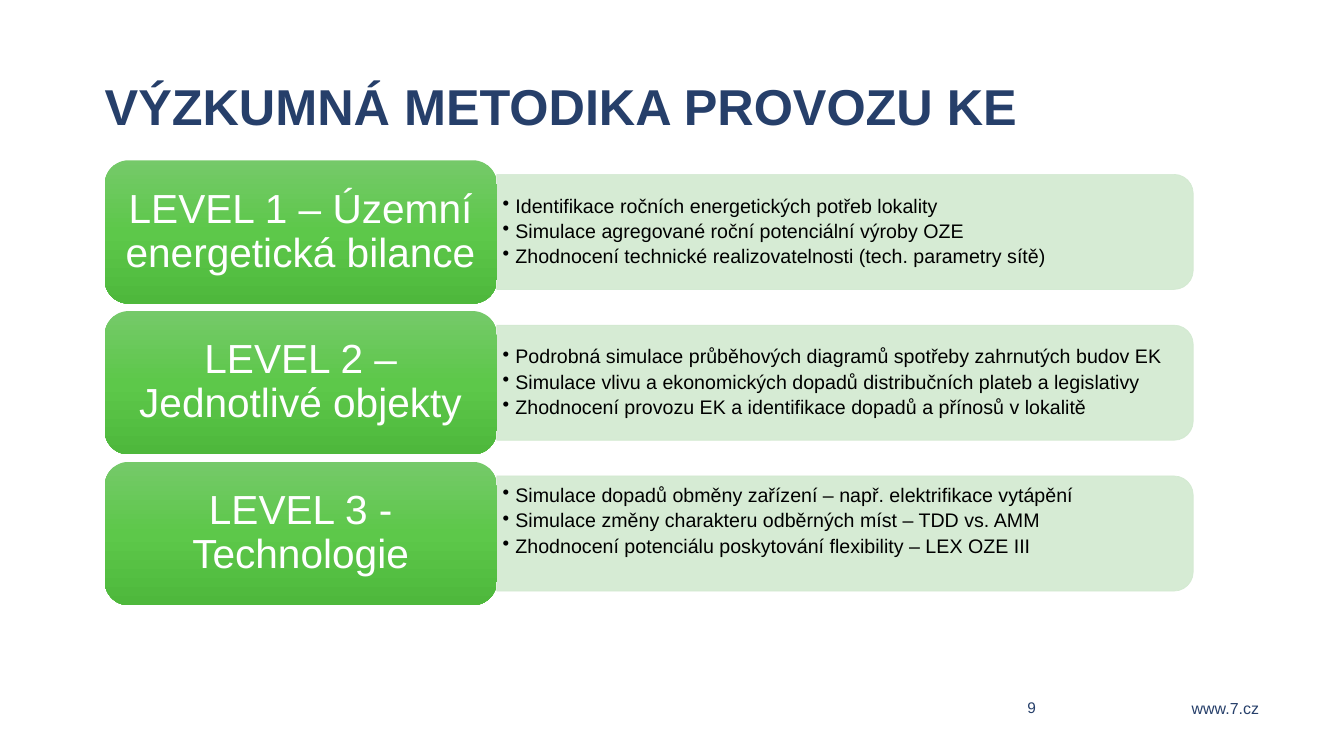
from copy import deepcopy

from lxml.etree import SubElement
from pptx import Presentation
from pptx.dml.color import RGBColor
from pptx.enum.shapes import MSO_SHAPE
from pptx.enum.text import MSO_ANCHOR, PP_ALIGN
from pptx.oxml.ns import qn
from pptx.util import Cm, Pt

TITLE = "VÝZKUMNÁ METODIKA PROVOZU KE"
PAGE_NUMBER = "9"
WEBSITE = "www.7.cz"
LEVELS = [
    {"name": "LEVEL 1 – Územní energetická bilance", "lift": 0,
     "steps": ["Identifikace ročních energetických potřeb lokality",
               "Simulace agregované roční potenciální výroby OZE",
               "Zhodnocení technické realizovatelnosti (tech. parametry sítě)"]},
    {"name": "LEVEL 2 – Jednotlivé objekty", "lift": 0,
     "steps": ["Podrobná simulace průběhových diagramů spotřeby zahrnutých budov EK",
               "Simulace vlivu a ekonomických dopadů distribučních plateb a legislativy",
               "Zhodnocení provozu EK a identifikace dopadů a přínosů v lokalitě"]},
    {"name": "LEVEL 3 - Technologie", "lift": 0.6,
     "steps": ["Simulace dopadů obměny zařízení – např. elektrifikace vytápění",
               "Simulace změny charakteru odběrných míst – TDD vs. AMM",
               "Zhodnocení potenciálu poskytování flexibility – LEX OZE III"]},
]
COLORS = {"navy": "263F6A", "panel": "D2E9D0", "text": "000000", "white": "FFFFFF",
          "green_top": "75C969", "green_mid": "5DC84A", "green_end": "4EB83C"}
FONT = "Arial"
LEFT, TOP, PITCH = 2.64, 4.04, 3.8
NAME_W, NAME_H = 9.88, 3.61
PANEL_W, PANEL_H = 17.55, 2.9
STEPS_W, STEPS_H = 17.4, 2.62


def rgb(color):
    return RGBColor.from_string(COLORS[color])


def set_frame(frame, anchor, side=0, edge=0, lift=0):
    frame.word_wrap = True
    frame.vertical_anchor = anchor
    frame.margin_left = frame.margin_right = Cm(side)
    frame.margin_top, frame.margin_bottom = Cm(edge), Cm(edge + lift)


def write(paragraph, text, size, color, align=PP_ALIGN.LEFT, spacing=1.0, bold=False):
    paragraph.alignment = align
    paragraph.line_spacing = spacing
    run = paragraph.add_run()
    run.text = text
    run.font.name, run.font.size, run.font.bold = FONT, Pt(size), bold
    run.font.color.rgb = rgb(color)


def add_label(slide, box, text, size, anchor, **style):
    frame = slide.shapes.add_textbox(*map(Cm, box)).text_frame
    set_frame(frame, anchor)
    write(frame.paragraphs[0], text, size, "navy", **style)


def add_panel(slide, middle):
    center = LEFT + NAME_W + PANEL_W / 2
    panel = slide.shapes.add_shape(
        MSO_SHAPE.ROUND_2_SAME_RECTANGLE, Cm(center - PANEL_H / 2),
        Cm(middle - PANEL_W / 2), Cm(PANEL_H), Cm(PANEL_W))
    panel.rotation = 90
    panel.shadow.inherit = False
    panel.line.width = Pt(0.5)
    for fill in (panel.fill, panel.line.fill):
        fill.solid()
        fill.fore_color.rgb = rgb("panel")
    for tint in panel.element.spPr.iter(qn("a:srgbClr")):
        SubElement(tint, qn("a:alpha"), val="90000")


def add_steps(slide, middle, steps, lift):
    frame = slide.shapes.add_textbox(
        Cm(LEFT + NAME_W), Cm(middle - STEPS_H / 2), Cm(STEPS_W), Cm(STEPS_H)).text_frame
    set_frame(frame, MSO_ANCHOR.MIDDLE, 0.15, 0.08, lift)
    for index, step in enumerate(steps):
        paragraph = frame.add_paragraph() if index else frame.paragraphs[0]
        properties = paragraph._p.get_or_add_pPr()
        properties.set("marL", str(Cm(0.32)))
        properties.set("indent", str(-Cm(0.32)))
        SubElement(properties, qn("a:buChar"), char="•")
        paragraph.space_after = Pt(2.8)
        write(paragraph, step, 14, "text", spacing=0.9)


def add_name(slide, middle, name):
    card = slide.shapes.add_shape(
        MSO_SHAPE.ROUNDED_RECTANGLE, Cm(LEFT), Cm(middle - NAME_H / 2),
        Cm(NAME_W), Cm(NAME_H))
    card.shadow.inherit = False
    card.line.fill.background()
    card.fill.gradient()
    card.fill.gradient_angle = 270
    first_stop = next(card.element.spPr.iter(qn("a:gs")))
    first_stop.addnext(deepcopy(first_stop))
    shades = ("green_top", "green_mid", "green_end")
    for index, (stop, shade) in enumerate(zip(card.fill.gradient_stops, shades)):
        stop.position = index / 2
        stop.color.rgb = rgb(shade)
    set_frame(card.text_frame, MSO_ANCHOR.MIDDLE, 0.3, 0.15)
    write(card.text_frame.paragraphs[0], name, 29, "white", PP_ALIGN.CENTER, 0.9)


def main():
    """Build the slide on the three levels of the research method."""
    deck = Presentation()
    deck.slide_width, deck.slide_height = Cm(33.87), Cm(19.05)
    slide = deck.slides.add_slide(deck.slide_layouts[6])
    add_label(slide, (28.4, 17.6, 3.33, 0.48), WEBSITE, 11.4, MSO_ANCHOR.TOP,
              align=PP_ALIGN.RIGHT)
    add_label(slide, (LEFT, 2.03, 29.11, 1.4), TITLE, 36, MSO_ANCHOR.BOTTOM,
              spacing=0.9, bold=True)
    add_label(slide, (25.45, 17.58, 0.66, 0.48), PAGE_NUMBER, 11, MSO_ANCHOR.BOTTOM,
              align=PP_ALIGN.RIGHT)
    for index, level in enumerate(LEVELS):
        middle = TOP + NAME_H / 2 + index * PITCH
        add_panel(slide, middle)
        add_steps(slide, middle, level["steps"], level["lift"])
        add_name(slide, middle, level["name"])
    deck.save("out.pptx")


if __name__ == "__main__":
    main()
